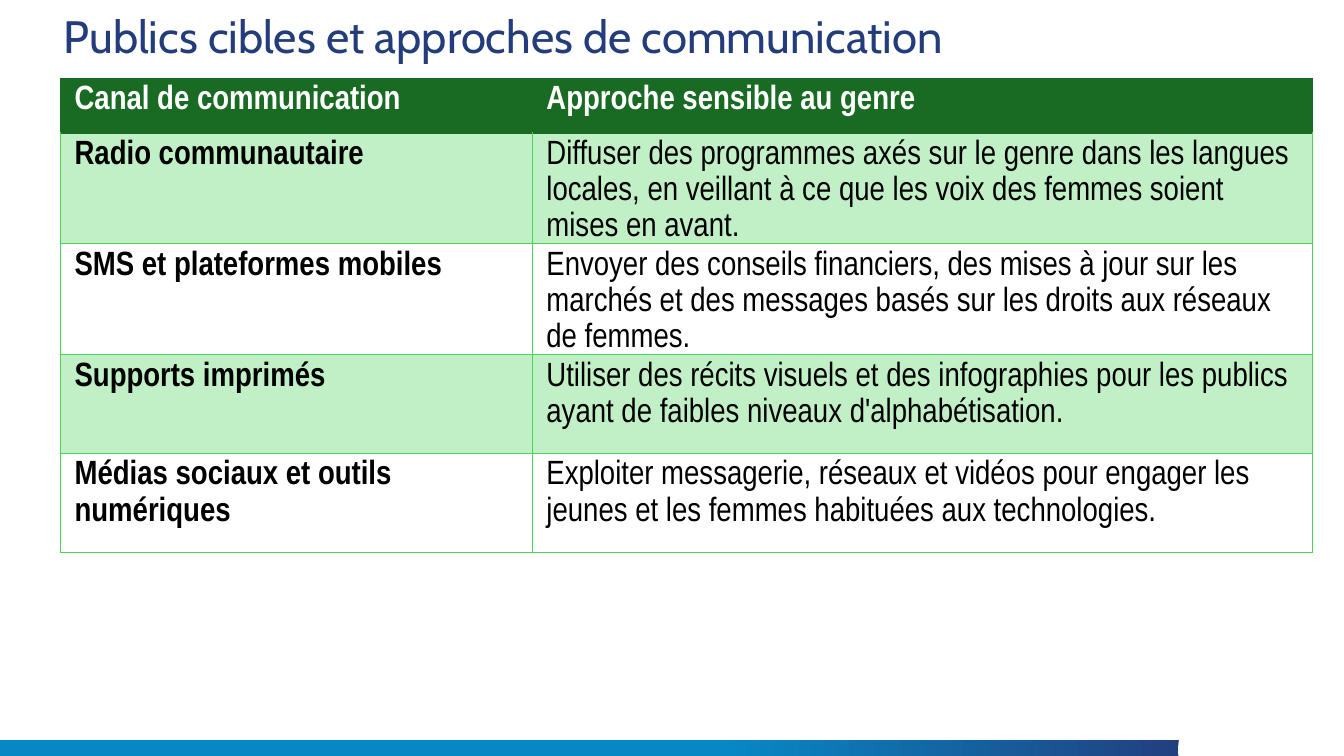
from typing import NamedTuple

from lxml import etree
from pptx import Presentation
from pptx.dml.color import RGBColor
from pptx.enum import shapes, text
from pptx.oxml import ns
from pptx.util import Cm, Pt

HUES = {
    "navy": "233C7B", "blue": "0788C5", "dark": "196B24", "line": "47D459",
    "pale": "C1F0C7", "white": "FFFFFF", "black": "000000",
}


class Box(NamedTuple):
    left: float
    top: float
    width: float
    height: float

    def cm(self) -> list:
        return [Cm(side) for side in self]


class Row(NamedTuple):
    canal: str
    method: str


TITLE = Box(1.35, 0.2, 30.5, 1.55)
BAR = Box(0, 18.64, 30.35, 0.41)
DISC = Box(29.69, 17.45, 2.9, 2.9)
GRID = Box(1.52, 1.98, 31.55, 11.33)
COLS = (11.89, 19.66)
HEAD = 1.37

ROWS = [
    Row("Canal de communication", "Approche sensible au genre"),
    Row("Radio communautaire",
        "Diffuser des programmes axés sur le genre dans les langues locales, "
        "en veillant à ce que les voix des femmes soient mises en avant."),
    Row("SMS et plateformes mobiles",
        "Envoyer des conseils financiers, des mises à jour sur les marchés "
        "et des messages basés sur les droits aux réseaux de femmes."),
    Row("Supports imprimés",
        "Utiliser des récits visuels et des infographies pour les publics "
        "ayant de faibles niveaux d'alphabétisation."),
    Row("Médias sociaux et outils numériques",
        "Exploiter messagerie, réseaux et vidéos pour engager les "
        "jeunes et les femmes habituées aux technologies."),
]


def rgb(name: str) -> RGBColor:
    return RGBColor.from_string(HUES[name])


def style(para, face: str, size: float, hue: str, bold: bool) -> None:
    for run in para.runs:
        font = run.font
        font.name, font.size, font.bold = face, Pt(size), bold
        font.color.rgb = rgb(hue)


def add_shape(slide, kind, box: Box):
    shape = slide.shapes.add_shape(kind, *box.cm())
    shape.shadow.inherit = False
    shape.line.fill.background()
    return shape


def add_decor(slide) -> None:
    bar = add_shape(slide, shapes.MSO_SHAPE.RECTANGLE, BAR)
    bar.fill.gradient()
    bar.fill.gradient_angle = 180
    marks = ((0, "navy"), (0.4, "blue"))
    for stop, (place, hue) in zip(bar.fill.gradient_stops, marks):
        stop.position = place
        stop.color.rgb = rgb(hue)
    disc = add_shape(slide, shapes.MSO_SHAPE.OVAL, DISC)
    disc.fill.solid()
    disc.fill.fore_color.rgb = rgb("white")


def add_title(slide) -> None:
    title = slide.shapes.title
    title.left, title.top, title.width, title.height = TITLE.cm()
    frame = title.text_frame
    frame.text = "Publics cibles et approches de communication"
    frame.auto_size = text.MSO_AUTO_SIZE.NONE
    frame.vertical_anchor = text.MSO_ANCHOR.MIDDLE
    para = frame.paragraphs[0]
    para.alignment = text.PP_ALIGN.LEFT
    para.line_spacing = 0.9
    style(para, "Cabin", 32.4, "navy", False)


def set_edges(cell, hues: dict[str, str]) -> None:
    """Border lines come before the fill in the cell properties."""
    props = cell._tc.get_or_add_tcPr()
    for spot, side in enumerate("LRTB"):
        line = etree.Element(ns.qn(f"a:ln{side}"), w=str(Pt(1)))
        fill = etree.SubElement(line, ns.qn("a:solidFill"))
        etree.SubElement(fill, ns.qn("a:srgbClr"), val=HUES[hues[side]])
        props.insert(spot, line)


def fill_cell(cell, words: str, row: int, col: int) -> None:
    head = row == 0
    cell.margin_left = cell.margin_right = Cm(0.36)
    cell.margin_top, cell.margin_bottom = Cm(0.05), Cm(0)
    cell.text_frame.text = words
    para = cell.text_frame.paragraphs[0]
    para.line_spacing, para.space_after = 1.15, Pt(8)
    style(para, "Arial Narrow", 24, "white" if head else "black",
          head or col == 0)
    if head or row % 2:
        cell.fill.solid()
        cell.fill.fore_color.rgb = rgb("dark" if head else "pale")
    else:
        cell.fill.background()
    edges = dict.fromkeys("LRTB", "dark" if head else "line")
    if row == 1:
        edges["T"] = "dark"
    set_edges(cell, edges)


def add_grid(slide) -> None:
    frame = slide.shapes.add_table(len(ROWS), len(COLS), *GRID.cm())
    table = frame.table
    for col, width in zip(table.columns, COLS):
        col.width = Cm(width)
    body = (GRID.height - HEAD) / (len(ROWS) - 1)
    for r, row in enumerate(ROWS):
        table.rows[r].height = Cm(body if r else HEAD)
        for c, words in enumerate(row):
            fill_cell(table.cell(r, c), words, r, c)


def main() -> None:
    deck = Presentation()
    deck.slide_width, deck.slide_height = Cm(33.87), Cm(19.05)
    slide = deck.slides.add_slide(deck.slide_layouts[5])
    # Footer band, heading, then the table
    add_decor(slide)
    add_title(slide)
    add_grid(slide)
    deck.save("out.pptx")


if __name__ == "__main__":
    main()
